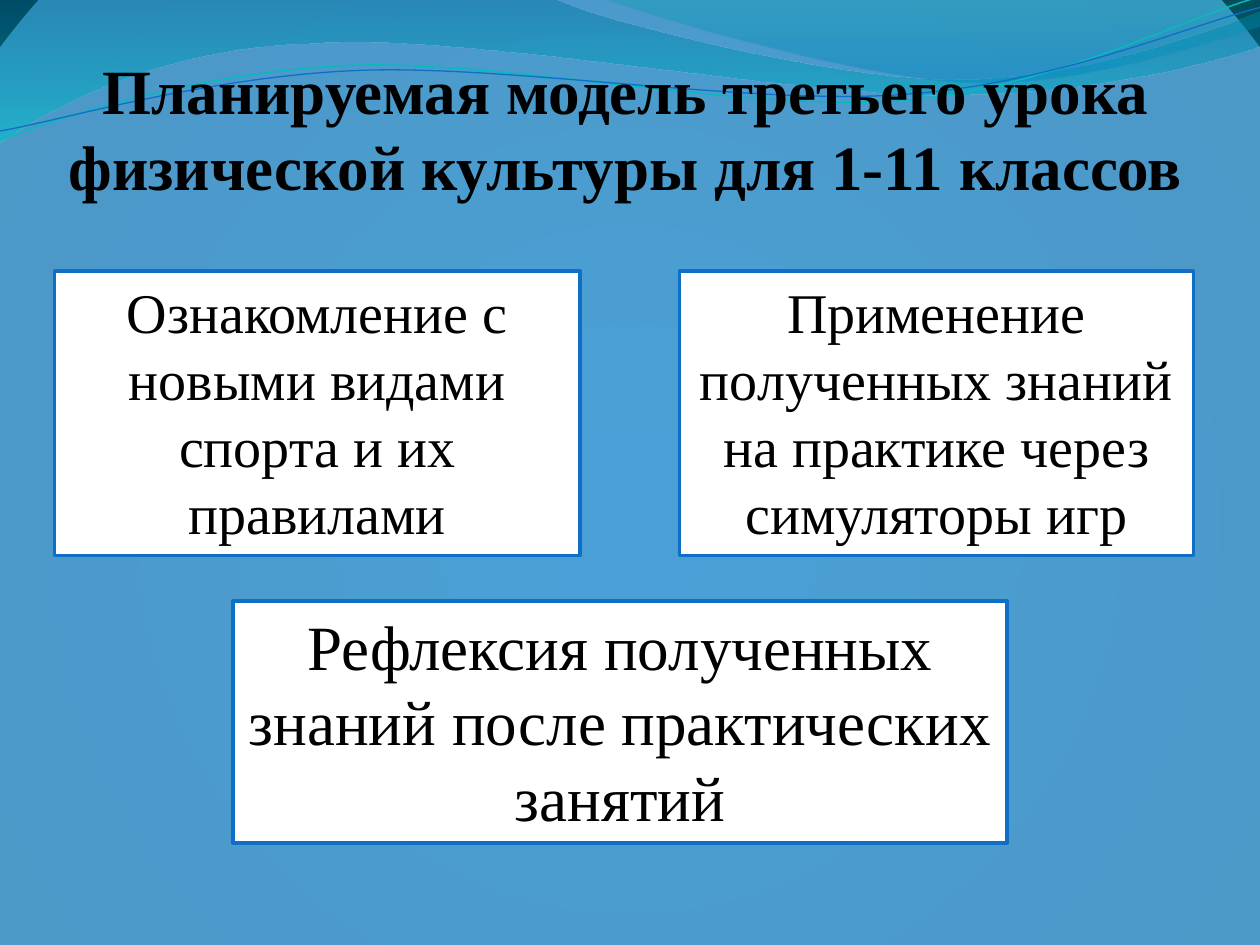
from dataclasses import dataclass

from pptx import Presentation, oxml
from pptx.dml.color import RGBColor
from pptx.enum import shapes, text
from pptx.oxml import ns
from pptx.util import Cm, Pt

FONT = "Times New Roman"
BLACK = RGBColor(0x00, 0x00, 0x00)
WHITE = RGBColor(0xFF, 0xFF, 0xFF)
BLUE = RGBColor(0x0F, 0x6F, 0xC6)
TURQUOISE = RGBColor(0x0A, 0xB8, 0xBF)
SKY = RGBColor(0x4A, 0xA0, 0xD6)
STEEL = RGBColor(0x4C, 0x98, 0xC7)
DEEP = RGBColor(0x00, 0x2C, 0x38)
OCEAN = RGBColor(0x00, 0x74, 0xA1)
CYAN = RGBColor(0x00, 0xC6, 0xCF)
TEAL = RGBColor(0x00, 0xA1, 0xA9)
AZURE = RGBColor(0x00, 0x8B, 0xBF)
UNITS_PER_INCH = 2540

Point = tuple[float, float]
Step = tuple[Point, ...]


@dataclass(frozen=True)
class Stop:
    position: int
    color: RGBColor
    opacity: int = 100


@dataclass(frozen=True)
class Wave:
    start: Point
    steps: list[Step]
    stops: tuple[Stop, ...]


@dataclass(frozen=True)
class Ribbon:
    start: Point
    steps: list[Step]
    color: RGBColor
    width: float


@dataclass(frozen=True)
class Stage:
    wording: str
    left: float
    top: float
    width: float
    height: float
    size: int


WAVES = [
    Wave((0, 0), [
        ((4.4, -0.01),),
        ((4.76, 0.17), (6.64, 0.63), (7.58, 0.63)),
        ((8.53, 0.63), (9.58, 0.26), (10, 0.09)),
        ((10.01, 0.36),),
        ((9.83, 0.44), (8.7, 0.76), (7.46, 0.75)),
        ((6.22, 0.75), (3.82, 0.28), (2.57, 0.34)),
        ((1.29, 0.36), (0.46, 0.83), (-0.01, 1.13)),
        ((0, 0),),
    ], (Stop(0, OCEAN, 45), Stop(100, CYAN, 55))),
    Wave((4.79, -0.01), [
        ((5.09, 0.11), (6.82, 0.62), (7.69, 0.65)),
        ((8.56, 0.69), (9.61, 0.32), (10, 0.21)),
        ((10, 0),),
        ((4.79, -0.01),),
    ], (Stop(0, TEAL, 30), Stop(80, AZURE, 45))),
]
RIBBONS = [
    Ribbon((0, 1.11), [
        ((0.48, 0.93), (1.58, 0.57), (2.77, 0.52)),
        ((3.95, 0.47), (5.93, 0.89), (7.13, 0.8)),
        ((8.33, 0.71), (9.38, 0.15), (9.98, -0.02)),
    ], TURQUOISE, 0.85),
    Ribbon((0, 1.04), [
        ((0.47, 0.96), (1.64, 0.61), (2.83, 0.56)),
        ((4.03, 0.51), (5.97, 0.84), (7.17, 0.75)),
        ((8.36, 0.67), (9.41, 0.21), (10, 0.06)),
    ], BLUE, 0.75),
]
STAGES = [
    Stage("Ознакомление с новыми видами спорта и их правилами", 1.1, 5.46, 10.59, 5.74, 32),
    Stage("Применение полученных знаний на практике через симуляторы игр",
          13.7, 5.46, 10.36, 5.74, 32),
    Stage("Рефлексия полученных знаний после практических занятий", 4.7, 12.12, 15.6, 4.88, 36),
]


def color_stop(stop: Stop) -> str:
    alpha = f'<a:alpha val="{stop.opacity * 1000}"/>' if stop.opacity < 100 else ""
    return (f'<a:gs pos="{stop.position * 1000}">'
            f'<a:srgbClr val="{stop.color}">{alpha}</a:srgbClr></a:gs>')


def apply_gradient(owner, stops: tuple[Stop, ...], direction: str) -> None:
    solid = owner.find(ns.qn("a:solidFill"))
    owner.replace(solid, oxml.parse_xml(
        f'<a:gradFill {ns.nsdecls("a")} rotWithShape="1">'
        f'<a:gsLst>{"".join(map(color_stop, stops))}</a:gsLst>{direction}</a:gradFill>'
    ))


def paint_background(slide) -> None:
    slide.background.fill.solid()
    apply_gradient(
        slide.element.find(".//" + ns.qn("p:bgPr")),
        (Stop(0, SKY), Stop(100, STEEL), Stop(100, DEEP)),
        '<a:path path="circle"><a:fillToRect l="10000" t="110000" r="10000" b="100000"/></a:path>',
    )


def to_units(point: Point) -> Point:
    return point[0] * UNITS_PER_INCH, point[1] * UNITS_PER_INCH


def bend(line, step: Step, origin: Point) -> None:
    points = "".join(
        f'<a:pt x="{round(x - origin[0])}" y="{round(y - origin[1])}"/>'
        for x, y in map(to_units, step)
    )
    line.getparent().replace(line, oxml.parse_xml(
        f'<a:cubicBezTo {ns.nsdecls("a")}>{points}</a:cubicBezTo>'
    ))


def add_outline(slide, start: Point, steps: list[Step], close: bool):
    builder = slide.shapes.build_freeform(*to_units(start), scale=Cm(0.001))
    builder.add_line_segments([to_units(step[-1]) for step in steps], close=close)
    outline = builder.convert_to_shape()
    outline.shadow.inherit = False
    anchors = [to_units(point) for point in (start, *(step[-1] for step in steps))]
    origin = min(x for x, _ in anchors), min(y for _, y in anchors)
    lines = list(outline.element.iter(ns.qn("a:lnTo")))
    for line, step in zip(lines, steps):
        if len(step) == 3:
            bend(line, step, origin)
    return outline


def add_wave(slide, wave: Wave) -> None:
    outline = add_outline(slide, wave.start, wave.steps, True)
    outline.line.fill.background()
    outline.fill.solid()
    apply_gradient(outline.element.spPr, wave.stops, '<a:lin ang="5400000" scaled="1"/>')


def add_ribbon(slide, ribbon: Ribbon) -> None:
    outline = add_outline(slide, ribbon.start, ribbon.steps, False)
    outline.fill.background()
    outline.line.color.rgb = ribbon.color
    outline.line.width = Pt(ribbon.width)


def write(frame, wording: str, size: int, bold: bool = False) -> None:
    frame.text = wording
    frame.word_wrap = True
    frame.vertical_anchor = text.MSO_ANCHOR.TOP
    paragraph = frame.paragraphs[0]
    paragraph.alignment = text.PP_ALIGN.CENTER
    paragraph.font.name = FONT
    paragraph.font.size = Pt(size)
    paragraph.font.bold = bold
    paragraph.font.color.rgb = BLACK


def place_title(slide) -> None:
    title = slide.shapes.title
    title.left, title.top, title.width, title.height = Cm(0.71), Cm(0.92), Cm(24), Cm(2.01)
    frame = title.text_frame
    write(frame, "Планируемая модель третьего урока физической культуры для 1-11 классов", 36, True)
    frame.paragraphs[0].space_before = Pt(7.2)
    frame.auto_size = text.MSO_AUTO_SIZE.NONE
    frame.margin_left, frame.margin_right = Cm(0), Cm(0.2)
    title.element.getparent().append(title.element)


def add_stage(slide, stage: Stage) -> None:
    box = slide.shapes.add_shape(
        shapes.MSO_SHAPE.RECTANGLE,
        Cm(stage.left), Cm(stage.top), Cm(stage.width), Cm(stage.height),
    )
    box.shadow.inherit = False
    box.fill.solid()
    box.fill.fore_color.rgb = WHITE
    box.line.color.rgb = BLUE
    box.line.width = Pt(2)
    write(box.text_frame, stage.wording, stage.size)
    box.text_frame.auto_size = text.MSO_AUTO_SIZE.SHAPE_TO_FIT_TEXT


def main() -> None:
    deck = Presentation()
    deck.slide_width, deck.slide_height = Cm(25.4), Cm(19.05)
    slide = deck.slides.add_slide(deck.slide_layouts[5])
    paint_background(slide)
    for wave in WAVES:
        add_wave(slide, wave)
    for ribbon in RIBBONS:
        add_ribbon(slide, ribbon)
    place_title(slide)
    for stage in STAGES:
        add_stage(slide, stage)
    deck.save("out.pptx")


if __name__ == "__main__":
    main()
